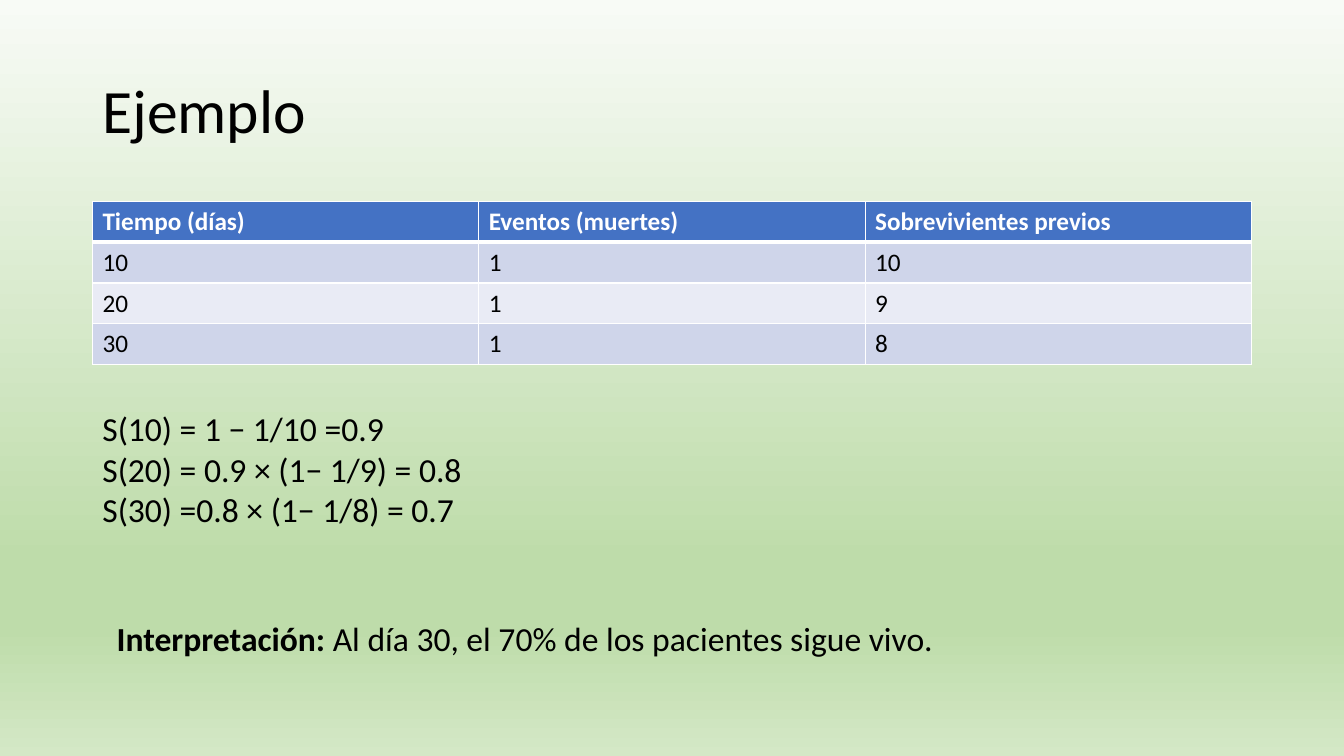
from dataclasses import dataclass

from lxml import etree
from pptx import Presentation
from pptx.dml.color import RGBColor
from pptx.enum.text import MSO_ANCHOR
from pptx.oxml.ns import qn
from pptx.util import Cm, Pt

MIDDLE, TOP = MSO_ANCHOR.MIDDLE, MSO_ANCHOR.TOP


@dataclass(frozen=True)
class Theme:
    font: str = "Calibri"
    text: str = "000000"
    white: str = "FFFFFF"
    header: str = "4472C4"
    bands: tuple = ("CFD5EA", "E9EBF5")
    backdrop: tuple = ((0, "F8FBF6"), (74, "BEDCAA"), (83, "BEDCAA"), (100, "D4E8C6"))
    title_size: int = 44
    body_size: int = 24
    table_size: int = 18
    thin: int = 1
    thick: int = 3


THEME = Theme()

ROWS = [
    ("Tiempo (días)", "Eventos (muertes)", "Sobrevivientes previos"),
    ("10", "1", "10"),
    ("20", "1", "9"),
    ("30", "1", "8"),
]
SURVIVAL_STEPS = [
    ["S(10) = 1 − 1/10 =0.9"],
    ["S(20) = 0.9 × (1− 1/9) = 0.8"],
    ["S(30) =0.8 × (1− 1/8) = 0.7"],
]
INTERPRETATION = [["Interpretación:", " Al día 30, el 70% de los pacientes sigue vivo."]]


def set_font(font, size, color=THEME.text, bold=False):
    font.name, font.size, font.bold = THEME.font, Pt(size), bold
    font.color.rgb = RGBColor.from_string(color)


def add_color(parent, color):
    etree.SubElement(parent, qn("a:srgbClr"), val=color)


def paint_background(s):
    fill = s.background.fill
    fill.gradient()
    fill.gradient_angle = 270
    stops = next(s.element.iter(qn("a:gsLst")))
    for stop in list(stops):
        stops.remove(stop)
    for percent, color in THEME.backdrop:
        add_color(etree.SubElement(stops, qn("a:gs"), pos=str(percent * 1000)), color)


def add_text(s, box, paragraphs, size, anchor=TOP, line_spacing=1.0):
    """Each paragraph is a list of runs; the first of several runs is bold."""
    tf = s.shapes.add_textbox(*box).text_frame
    tf.word_wrap, tf.vertical_anchor = True, anchor
    for i, runs in enumerate(paragraphs):
        p = tf.paragraphs[0] if i == 0 else tf.add_paragraph()
        p.line_spacing = line_spacing
        set_font(p.font, size)
        for j, text in enumerate(runs):
            r = p.add_run()
            r.text = text
            set_font(r.font, size, bold=len(runs) > 1 and j == 0)


def set_borders(cell, top, bottom):
    tc_pr = cell._tc.get_or_add_tcPr()
    widths = {"a:lnL": THEME.thin, "a:lnR": THEME.thin, "a:lnT": top, "a:lnB": bottom}
    for i, (tag, width) in enumerate(widths.items()):
        line = etree.Element(qn(tag), w=str(Pt(width)))
        add_color(etree.SubElement(line, qn("a:solidFill")), THEME.white)
        tc_pr.insert(i, line)


def add_survival_table(s, box, rows):
    table = s.shapes.add_table(len(rows), len(rows[0]), *box).table
    for i, values in enumerate(rows):
        head = i == 0
        fill = THEME.header if head else THEME.bands[(i - 1) % 2]
        for j, value in enumerate(values):
            cell = table.cell(i, j)
            cell.text, cell.vertical_anchor = value, MIDDLE
            cell.fill.solid()
            cell.fill.fore_color.rgb = RGBColor.from_string(fill)
            set_font(cell.text_frame.paragraphs[0].font, THEME.table_size,
                     THEME.white if head else THEME.text, head)
            set_borders(cell, THEME.thick if i == 1 else THEME.thin,
                        THEME.thick if head else THEME.thin)


def add_example_slide(prs):
    s = prs.slides.add_slide(prs.slide_layouts[6])
    paint_background(s)
    left, width = Cm(2.33), Cm(29.21)
    add_text(s, (left, Cm(1.01), width, Cm(3.68)), [["Ejemplo"]],
             THEME.title_size, MIDDLE, 0.9)
    add_survival_table(s, (left, Cm(5.07), width, Cm(4.12)), ROWS)
    add_text(s, (left, Cm(10.16), Cm(27.74), Cm(3.33)), SURVIVAL_STEPS, THEME.body_size)
    add_text(s, (Cm(2.69), Cm(15.44), Cm(25.43), Cm(1.28)), INTERPRETATION, THEME.body_size)


def main():
    prs = Presentation()
    prs.slide_width, prs.slide_height = Cm(33.87), Cm(19.05)
    add_example_slide(prs)
    prs.save("out.pptx")


if __name__ == "__main__":
    main()
